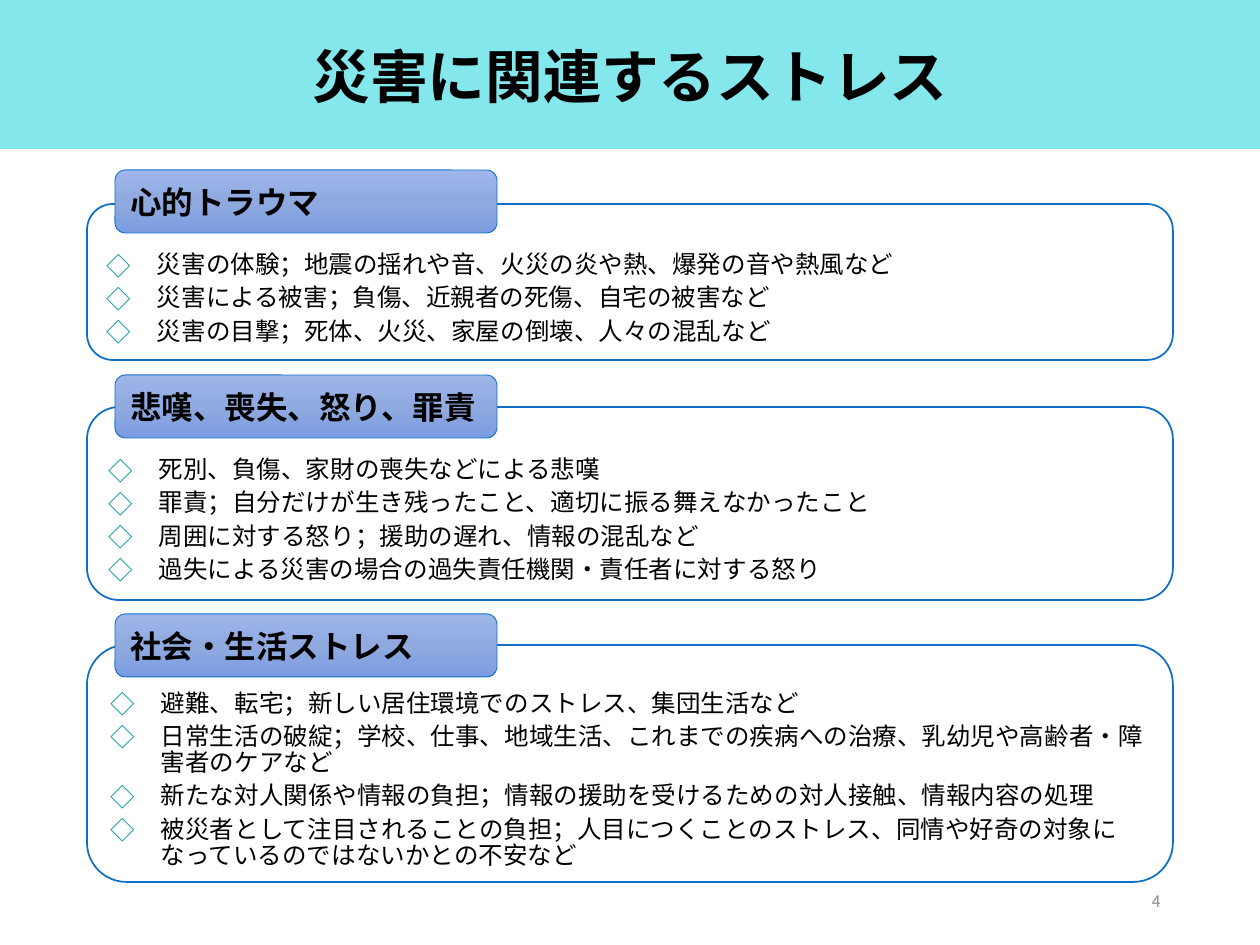
from copy import deepcopy

from lxml.etree import SubElement
from pptx import Presentation
from pptx.dml.color import RGBColor
from pptx.enum.shapes import MSO_SHAPE
from pptx.enum.text import MSO_ANCHOR, MSO_AUTO_SIZE, PP_ALIGN
from pptx.oxml.ns import qn
from pptx.util import Pt

EMU_PER_PX = 914400 / 126
FONT = "Noto Sans CJK JP"
BLACK, WHITE, GREY = "000000", "FFFFFF", "8C8C8C"
AQUA, BLUE, TEAL = "0BD0D9", "0F6FC6", "089CA3"
TAB_GRADIENT = [(0, "9EB5EA"), (0.5, "90AAE0"), (1, "7C9CE1")]

SECTIONS = [
    ("心的トラウマ", 170, 204, 156, [
        "災害の体験；地震の揺れや音、火災の炎や熱、爆発の音や熱風など",
        "災害による被害；負傷、近親者の死傷、自宅の被害など",
        "災害の目撃；死体、火災、家屋の倒壊、人々の混乱など",
    ]),
    ("悲嘆、喪失、怒り、罪責", 375, 407, 193, [
        "死別、負傷、家財の喪失などによる悲嘆",
        "罪責；自分だけが生き残ったこと、適切に振る舞えなかったこと",
        "周囲に対する怒り；援助の遅れ、情報の混乱など",
        "過失による災害の場合の過失責任機関・責任者に対する怒り",
    ]),
    ("社会・生活ストレス", 614, 645, 237, [
        "避難、転宅；新しい居住環境でのストレス、集団生活など",
        "日常生活の破綻；学校、仕事、地域生活、これまでの疾病への治療、"
        "乳幼児や高齢者・障害者のケアなど",
        "新たな対人関係や情報の負担；情報の援助を受けるための対人接触、情報内容の処理",
        "被災者として注目されることの負担；人目につくことのストレス、"
        "同情や好奇の対象になっているのではないかとの不安など",
    ]),
]


def px(length):
    """Turn whole pixels into EMU."""
    return round(length * EMU_PER_PX)


def rgb(color):
    """Turn a hex string into a colour."""
    return RGBColor.from_string(color)


class StressSlide:
    """Holds the slide and draws its elements in one style."""

    def __init__(self, deck):
        """Add a slide with a title to the deck."""
        self.page = deck.slides.add_slide(deck.slide_layouts[5])

    def set_text(self, shape, lines, size, color=BLACK, bold=False, align=PP_ALIGN.LEFT):
        """Fill a shape with formatted paragraphs."""
        frame = shape.text_frame
        frame.text = "\n".join(lines)
        frame.word_wrap = True
        frame.auto_size = MSO_AUTO_SIZE.NONE
        frame.vertical_anchor = MSO_ANCHOR.MIDDLE
        for para in frame.paragraphs:
            para.alignment = align
            for span in para.runs:
                font = span.font
                font.name, font.size, font.bold = FONT, Pt(size), bold
                font.color.rgb = rgb(color)
                SubElement(font._element, qn("a:ea"), typeface=FONT)
        return frame

    def box(self, kind, left, top, width, height, fill=None, line=None, weight=1):
        """Draw a preset shape without a shadow."""
        shape = self.page.shapes.add_shape(kind, px(left), px(top), px(width), px(height))
        shape.shadow.inherit = False
        if fill:
            shape.fill.solid()
            shape.fill.fore_color.rgb = rgb(fill)
        if line:
            shape.line.color.rgb = rgb(line)
            shape.line.width = Pt(weight)
        else:
            shape.line.fill.background()
        return shape

    def banner(self, height):
        """Draw the half transparent band across the top."""
        band = self.box(MSO_SHAPE.RECTANGLE, 0, 0, 1260, height, AQUA)
        color = band._element.spPr.find(qn("a:solidFill"))[0]
        SubElement(color, qn("a:alpha"), val="50000")

    def title(self, text):
        """Place the title in front of the banner."""
        title = self.page.shapes.title
        title.left, title.top, title.width, title.height = map(px, (87, 26, 1086, 107))
        frame = self.set_text(title, [text], 33, bold=True, align=PP_ALIGN.CENTER)
        frame.paragraphs[0].line_spacing = 0.9
        self.page.shapes._spTree.append(title._element)

    def panel(self, top, height, items):
        """Draw an outlined panel with a diamond list below its tab."""
        panel = self.box(MSO_SHAPE.ROUNDED_RECTANGLE, 87, top, 1086, height, WHITE, BLUE)
        frame = self.set_text(panel, items, 14)
        frame.margin_top, frame.margin_bottom = px(40), px(6)
        for para in frame.paragraphs:
            para.level = 1
            para.line_spacing = 0.9
            para.space_before = Pt(3.8)
            props = para._p.get_or_add_pPr()
            props.set("marL", str(px(50)))
            props.set("indent", str(px(-50)))
            SubElement(SubElement(props, qn("a:buClr")), qn("a:srgbClr"), val=TEAL)
            SubElement(props, qn("a:buFont"), typeface=FONT)
            SubElement(props, qn("a:buChar"), char="◇")

    def tab(self, top, text):
        """Draw the gradient heading of a panel."""
        tab = self.box(MSO_SHAPE.ROUNDED_RECTANGLE, 115, top, 382, 63, line=BLUE, weight=0.5)
        tab.fill.gradient()
        tab.fill.gradient_angle = 270
        stop_list = tab._element.spPr.find(qn("a:gradFill")).find(qn("a:gsLst"))
        stop_list.insert(1, deepcopy(stop_list[0]))
        for stop, (position, color) in zip(tab.fill.gradient_stops, TAB_GRADIENT):
            stop.position = position
            stop.color.rgb = rgb(color)
        self.set_text(tab, [text], 18, bold=True)

    def number(self, text):
        """Place the page number at the lower right."""
        box = self.page.shapes.add_textbox(px(890), px(876), px(283), px(50))
        self.set_text(box, [text], 9, GREY, align=PP_ALIGN.RIGHT)


def main():
    """Build and save the deck."""
    deck = Presentation()
    deck.slide_width, deck.slide_height = px(1260), px(945)
    slide = StressSlide(deck)
    slide.banner(149)
    slide.title("災害に関連するストレス")
    for heading, tab_top, panel_top, height, items in SECTIONS:
        slide.panel(panel_top, height, items)
        slide.tab(tab_top, heading)
    slide.number("4")
    deck.save("out.pptx")


if __name__ == "__main__":
    main()
